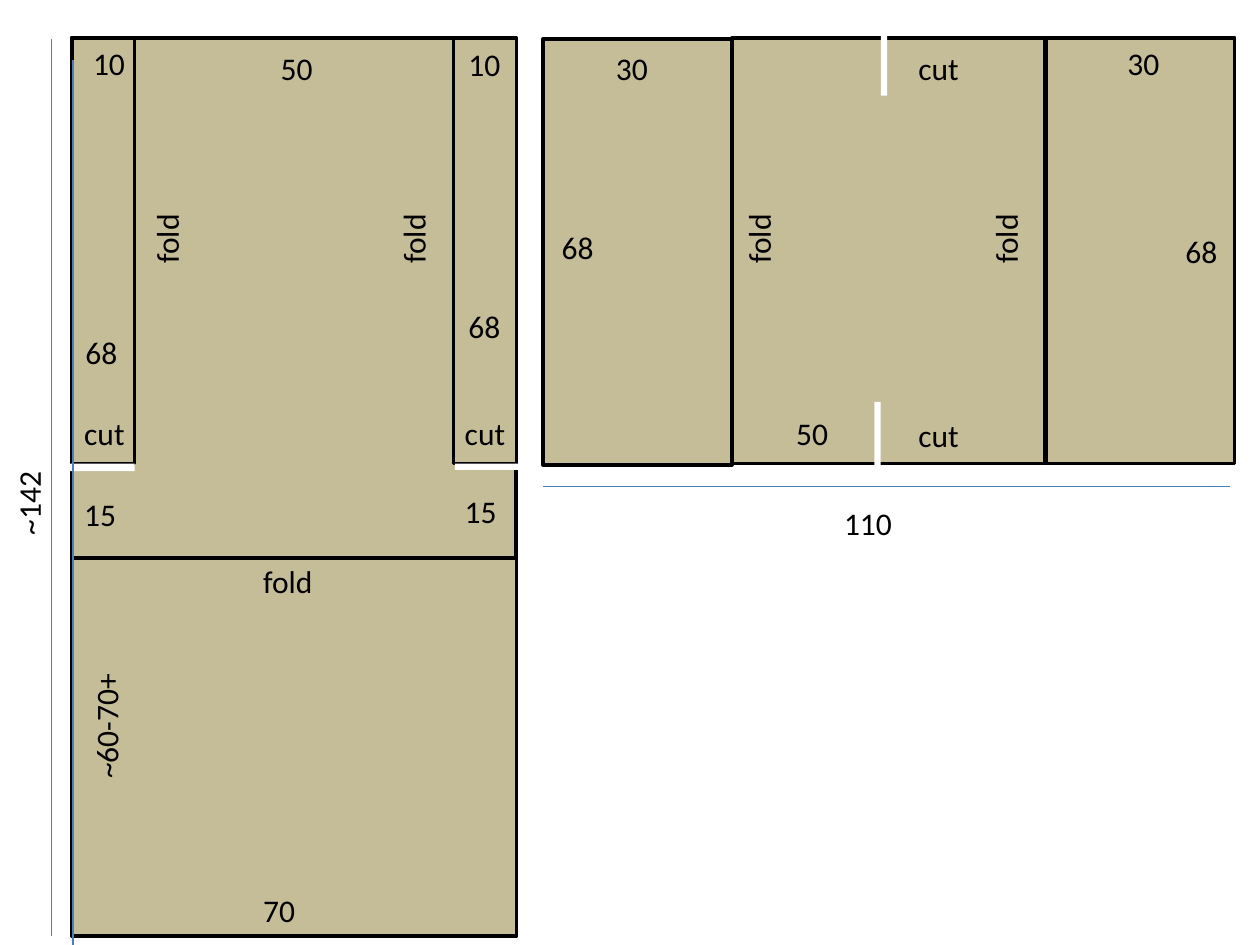
from lxml.etree import SubElement
from pptx import Presentation
from pptx.dml.color import RGBColor
from pptx.enum.shapes import MSO_CONNECTOR, MSO_SHAPE
from pptx.enum.text import MSO_AUTO_SIZE
from pptx.oxml.ns import qn
from pptx.util import Inches, Pt

TAN = RGBColor(0xC4, 0xBD, 0x97)
BLACK = RGBColor(0, 0, 0)
WHITE = RGBColor(0xFF, 0xFF, 0xFF)
BLUE = RGBColor(0x4B, 0x7E, 0xBC)

# Left, top, width, height in inches, from back to front
LEFT_PANELS = [
    (0.57, 3.68, 3.53, 3.75),
    (0.57, 0.3, 3.52, 4.13),
    (0.57, 0.3, 0.5, 3.38),
    (3.6, 0.3, 0.5, 3.38),
]
LEFT_CUTS = [(3.61, 3.68, 1.17, 0.05), (0.26, 3.68, 0.81, 0.06)]
RIGHT_PANELS = [
    (5.81, 0.3, 2.48, 3.38),
    (4.31, 0.31, 1.5, 3.38),
    (8.3, 0.3, 1.5, 3.38),
]
RIGHT_CUTS = [(6.99, 0, 0.05, 0.76), (6.94, 3.19, 0.05, 0.55)]

# Start x, start y, end x, end y
DIMENSION_LINES = [
    (0.41, 0.31, 0.41, 7.43),
    (9.76, 3.86, 4.31, 3.86),
    (0.58, 0.48, 0.58, 7.6),
]

# Text: left and top of each place it stands
LABELS = {
    "10": [(0.64, 0.3), (3.62, 0.31)],
    "15": [(0.57, 3.88), (3.59, 3.86)],
    "30": [(4.79, 0.34), (8.85, 0.3)],
    "50": [(2.13, 0.34), (6.22, 3.24)],
    "68": [(0.58, 2.59), (3.62, 2.39), (4.36, 1.76), (9.31, 1.79)],
    "70": [(1.99, 7.02)],
    "110": [(6.6, 3.95)],
    "cut": [(0.57, 3.24), (3.59, 3.24), (7.19, 3.25), (7.19, 0.34)],
    "fold": [(1.99, 4.41)],
}
UPRIGHT_LABELS = {
    "fold": [(1.02, 1.69), (2.98, 1.69), (5.72, 1.69), (7.68, 1.69)],
    "~142": [(-0.13, 3.79)],
    "~60-70+": [(0.32, 5.56)],
}
LABEL_WIDTHS = {"110": 0.59, "cut": 0.53, "fold": 0.6, "~142": 0.71, "~60-70+": 1.04}
NUMBER_WIDTH = 0.46
LABEL_HEIGHT = 0.4
FONT_FORMAT = {"name": "Calibri", "size": Pt(18)}


def add_rectangle(slide, box, fill, outlined):
    shape = slide.shapes.add_shape(MSO_SHAPE.RECTANGLE, *map(Inches, box))
    shape.shadow.inherit = False
    shape.fill.solid()
    shape.fill.fore_color.rgb = fill
    if outlined:
        shape.line.color.rgb = BLACK
        shape.line.width = Pt(2)
    else:
        shape.line.fill.background()


def add_dimension_line(slide, ends):
    connector = slide.shapes.add_connector(MSO_CONNECTOR.STRAIGHT, *map(Inches, ends))
    connector.line.color.rgb = BLUE
    connector.line.width = Pt(0.75)
    SubElement(connector._element.spPr, qn("a:effectLst"))


def add_label(slide, text, left, top, rotation):
    width = LABEL_WIDTHS.get(text, NUMBER_WIDTH)
    box = slide.shapes.add_textbox(*map(Inches, (left, top, width, LABEL_HEIGHT)))
    box.rotation = rotation
    box.text_frame.word_wrap = False
    box.text_frame.auto_size = MSO_AUTO_SIZE.SHAPE_TO_FIT_TEXT
    run = box.text_frame.paragraphs[0].add_run()
    run.text = text
    for attribute, value in FONT_FORMAT.items():
        setattr(run.font, attribute, value)
    run.font.color.rgb = BLACK


def main():
    presentation = Presentation()
    presentation.slide_width = Inches(10)
    presentation.slide_height = Inches(7.5)
    slide = presentation.slides.add_slide(presentation.slide_layouts[6])

    for panels, cuts in ((LEFT_PANELS, LEFT_CUTS), (RIGHT_PANELS, RIGHT_CUTS)):
        for box in panels:
            add_rectangle(slide, box, TAN, outlined=True)
        for box in cuts:
            add_rectangle(slide, box, WHITE, outlined=False)
    for ends in DIMENSION_LINES:
        add_dimension_line(slide, ends)
    for labels, rotation in ((LABELS, 0), (UPRIGHT_LABELS, 270)):
        for text, places in labels.items():
            for left, top in places:
                add_label(slide, text, left, top, rotation)

    presentation.save("out.pptx")


if __name__ == "__main__":
    main()
